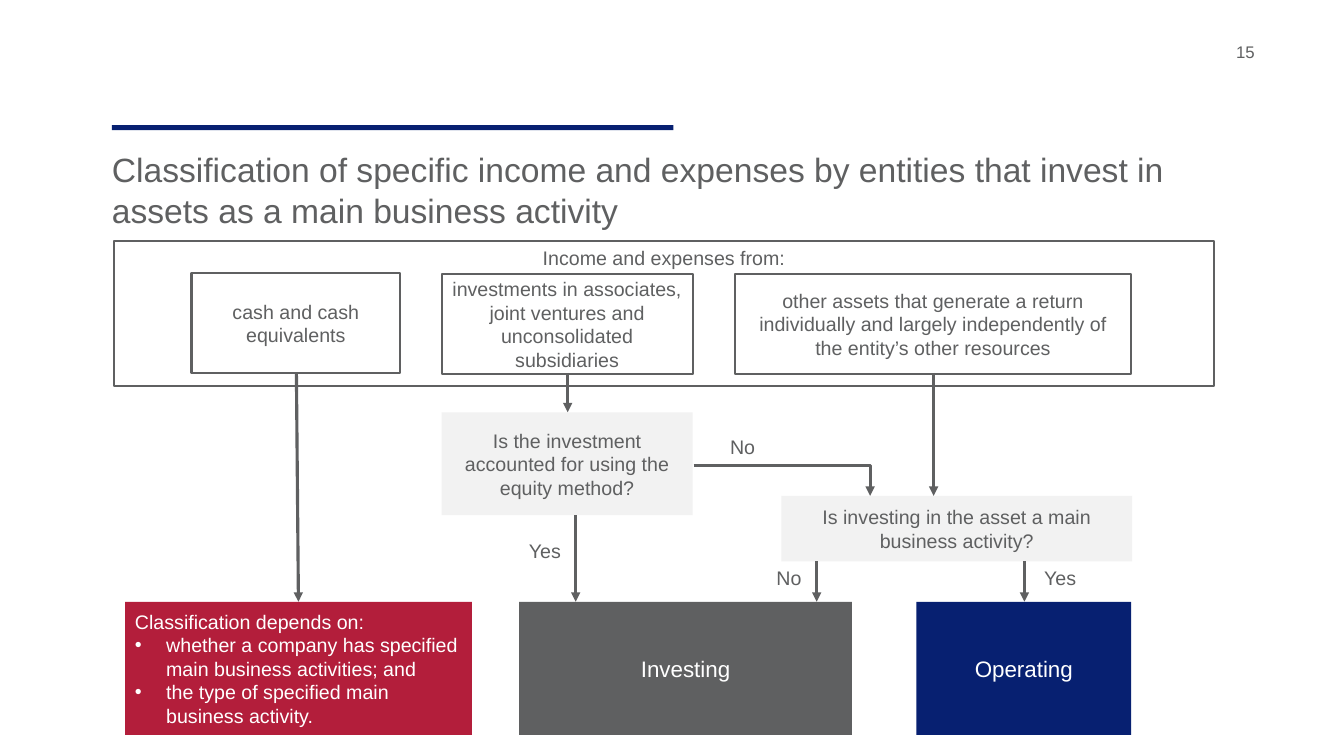
from lxml import etree
from pptx import Presentation
from pptx.dml.color import RGBColor
from pptx.enum.shapes import MSO_CONNECTOR, MSO_SHAPE
from pptx.enum.text import MSO_ANCHOR, MSO_AUTO_SIZE, PP_ALIGN
from pptx.oxml.ns import qn
from pptx.util import Inches, Pt

GREY = RGBColor(0x5F, 0x60, 0x61)
PALE = RGBColor(0xF2, 0xF2, 0xF2)
WHITE = RGBColor(0xFF, 0xFF, 0xFF)
NAVY = RGBColor(0x07, 0x20, 0x71)
RED = RGBColor(0xB3, 0x1E, 0x3B)
RECTANGLE = MSO_SHAPE.RECTANGLE
STRAIGHT, ELBOW = MSO_CONNECTOR.STRAIGHT, MSO_CONNECTOR.ELBOW
TOP, MIDDLE = MSO_ANCHOR.TOP, MSO_ANCHOR.MIDDLE
LEFT, CENTER = PP_ALIGN.LEFT, PP_ALIGN.CENTER
NO_AUTOFIT = MSO_AUTO_SIZE.NONE
TITLE_ONLY = 5
OUTCOME_TOP, OUTCOME_HEIGHT = 5.97, 1.32


def style(paragraph, size, color, align):
    """Set the alignment and font of a paragraph."""
    paragraph.alignment = align
    paragraph.font.name = "Arial"
    paragraph.font.size = Pt(size)
    paragraph.font.color.rgb = color


def add_title(slide, text):
    """Move and format the title placeholder."""
    title = slide.shapes.title
    title.left, title.top = Inches(1.01), Inches(1.43)
    title.width, title.height = Inches(11.12), Inches(0.84)
    frame = title.text_frame
    frame.text = text
    frame.auto_size = NO_AUTOFIT
    frame.vertical_anchor = TOP
    style(frame.paragraphs[0], 24, GREY, LEFT)


def add_box(slide, area, text="", fill=WHITE, color=GREY, size=14,
            outlined=False, anchor=MIDDLE, align=CENTER):
    """Add a filled rectangle with text."""
    box = slide.shapes.add_shape(RECTANGLE, *map(Inches, area))
    box.shadow.inherit = False
    box.fill.solid()
    box.fill.fore_color.rgb = fill
    if outlined:
        box.line.color.rgb = GREY
        box.line.width = Pt(1.5)
    else:
        box.line.fill.background()
    frame = box.text_frame
    frame.word_wrap = True
    frame.vertical_anchor = anchor
    frame.text = text
    style(frame.paragraphs[0], size, color, align)
    return box


def add_bullet(box, text):
    """Append a white bulleted paragraph to a box."""
    paragraph = box.text_frame.add_paragraph()
    paragraph.text = text
    properties = paragraph._p.get_or_add_pPr()
    properties.set("marL", str(Inches(0.31)))
    properties.set("indent", str(-Inches(0.31)))
    etree.SubElement(properties, qn("a:buFont"), typeface="Arial")
    etree.SubElement(properties, qn("a:buChar"), char="•")
    style(paragraph, 14, WHITE, LEFT)


def add_label(slide, area, text, size=14, anchor=MIDDLE, align=CENTER, inset=0.05):
    """Add a short grey text without side insets."""
    frame = slide.shapes.add_textbox(*map(Inches, area)).text_frame
    frame.word_wrap = True
    frame.margin_left = frame.margin_right = 0
    frame.margin_top = frame.margin_bottom = Inches(inset)
    frame.vertical_anchor = anchor
    frame.text = text
    style(frame.paragraphs[0], size, GREY, align)


def add_arrow(slide, start, end, kind=STRAIGHT):
    """Add a grey arrow; an elbow turns down at its far end."""
    arrow = slide.shapes.add_connector(kind, *map(Inches, start + end))
    arrow.line.color.rgb = GREY
    arrow.line.width = Pt(2.25)
    etree.SubElement(arrow.line._get_or_add_ln(), qn("a:tailEnd"), type="triangle")
    properties = arrow._element.spPr
    etree.SubElement(properties, qn("a:effectLst"))
    if kind == ELBOW:
        guides = properties.find(qn("a:prstGeom")).find(qn("a:avLst"))
        etree.SubElement(guides, qn("a:gd"), name="adj1", fmla="val 100000")


def add_sources(slide):
    """Add the frame with the three kinds of income and expenses."""
    add_box(slide, (1.13, 2.39, 10.91, 1.44), "Income and expenses from:",
            outlined=True, anchor=TOP)
    sources = (
        (1.9, 2.71, 2.07, "cash and cash equivalents"),
        (4.38, 2.72, 2.49,
         "investments in associates, joint ventures and unconsolidated subsidiaries"),
        (7.29, 2.72, 3.93,
         "other assets that generate a return individually and largely "
         "independently of the entity’s other resources"),
    )
    for left, top, width, text in sources:
        add_box(slide, (left, top, width, 0.99), text, outlined=True)


def add_decisions(slide):
    """Add the two questions, their answers and all arrows."""
    add_box(slide, (4.38, 4.09, 2.49, 1.02),
            "Is the investment accounted for using the equity method?", PALE)
    add_box(slide, (7.75, 4.92, 3.48, 0.65),
            "Is investing in the asset a main business activity?", PALE)
    answers = ((7.02, 4.33, "No"), (5.06, 5.36, "Yes"),
               (7.48, 5.63, "No"), (10.17, 5.63, "Yes"))
    for left, top, answer in answers:
        add_label(slide, (left, top, 0.69, 0.21), answer)
    arrows = (
        ((2.94, 3.7), (2.96, OUTCOME_TOP)),
        ((5.63, 3.7), (5.63, 4.09)),
        ((9.26, 3.7), (9.26, 4.92)),
        ((5.71, 5.11), (5.71, OUTCOME_TOP)),
        ((8.1, 5.57), (8.1, OUTCOME_TOP)),
        ((10.16, 5.57), (10.16, OUTCOME_TOP)),
    )
    for start, end in arrows:
        add_arrow(slide, start, end)
    add_arrow(slide, (6.88, 4.62), (8.63, 4.92), ELBOW)


def add_outcomes(slide):
    """Add the three resulting classifications."""
    depends = add_box(slide, (1.24, OUTCOME_TOP, 3.44, OUTCOME_HEIGHT),
                      "Classification depends on:", RED, WHITE, align=LEFT)
    add_bullet(depends, "whether a company has specified main business activities; and")
    add_bullet(depends, "the type of specified main business activity.")
    for left, width, text, fill in ((5.15, 3.3, "Investing", GREY),
                                    (9.09, 2.13, "Operating", NAVY)):
        add_box(slide, (left, OUTCOME_TOP, width, OUTCOME_HEIGHT), text, fill, WHITE, 16)


def main():
    """Build and save the slide."""
    deck = Presentation()
    deck.slide_width, deck.slide_height = Inches(13.33), Inches(7.5)
    slide = deck.slides.add_slide(deck.slide_layouts[TITLE_ONLY])
    add_box(slide, (1.11, 1.24, 5.57, 0.05), fill=NAVY)
    add_label(slide, (12.26, 0.41, 0.67, 0.29), "15", 12, TOP, LEFT, 0)
    add_title(slide, "Classification of specific income and expenses by entities "
                     "that invest in assets as a main business activity")
    add_sources(slide)
    add_decisions(slide)
    add_outcomes(slide)
    deck.save("out.pptx")


if __name__ == "__main__":
    main()
